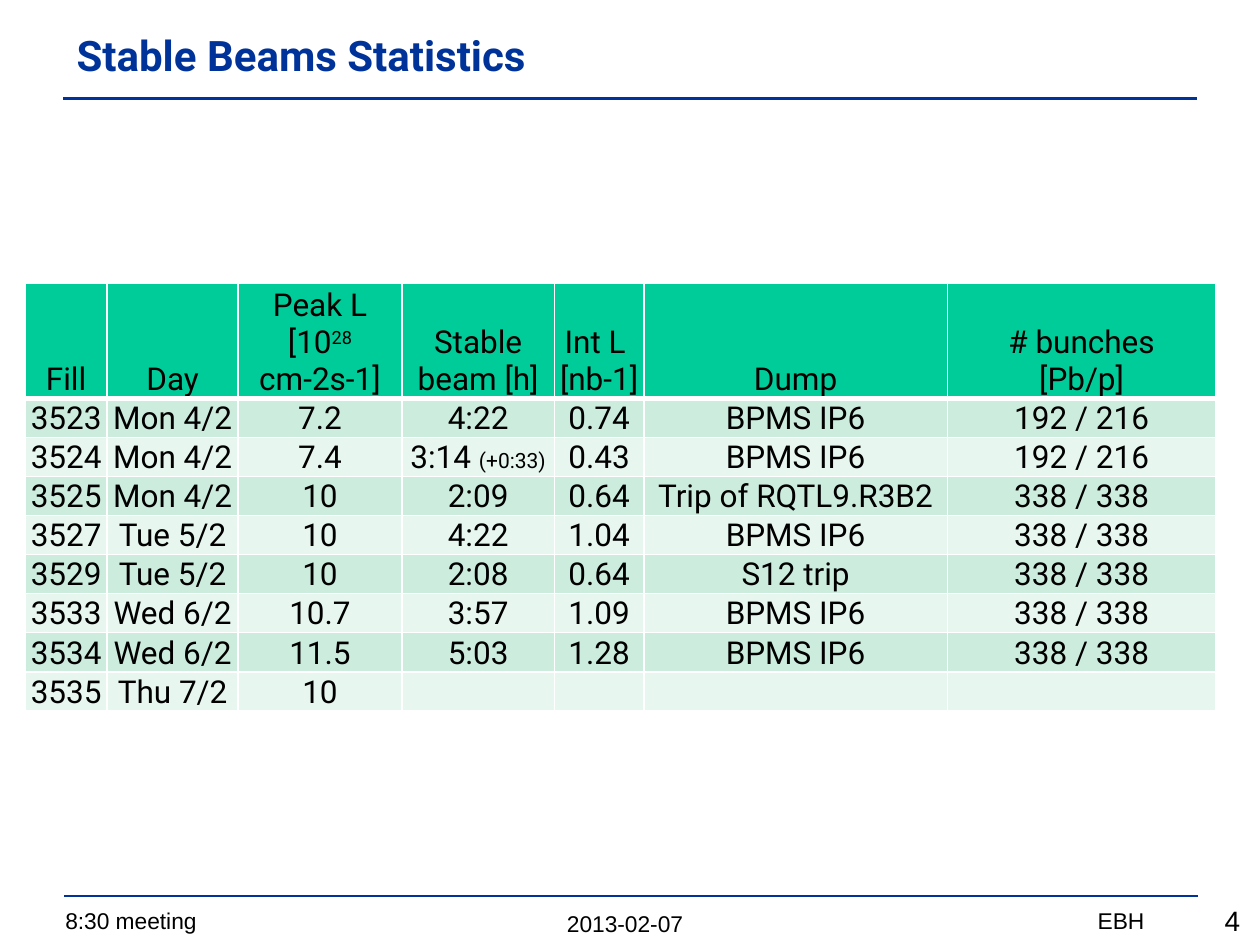
from lxml.etree import SubElement as Sub
from pptx import Presentation
from pptx.dml.color import RGBColor as Rgb
from pptx.enum.shapes import MSO_CONNECTOR as Conn
from pptx.enum.text import MSO_ANCHOR as Anchor, MSO_AUTO_SIZE as Auto, PP_ALIGN as Align
from pptx.oxml.ns import qn
from pptx.util import Inches, Pt

INK = {"text": "000000", "blue": "003399", "head": "00CC99",
       "odd": "CCECDE", "even": "E7F6EF", "rule": "FFFFFF"}
WIDTHS = [0.65, 1.04, 1.3, 1.21, 0.71, 2.41, 2.13]
HEIGHTS = [0.41] + [0.31] * 8
PEAK = [[("Peak L\n[10", {}), ("28 ", {"base": 30}), ("cm-2s-1]", {})]]
SPLIT = [[("3:14 ", {}), ("(+0:33)", {"size": 12})]]
BUNCH = [[("# bunches", {})], [("[Pb/p]", {})]]
ROWS = [
    ["Fill", "Day", PEAK, "Stable beam [h]", "Int L \n[nb-1]", "Dump", BUNCH],
    ["3523", "Mon 4/2", "7.2", "4:22", "0.74", "BPMS IP6", "192 / 216"],
    ["3524", "Mon 4/2", "7.4", SPLIT, "0.43", "BPMS IP6", "192 / 216"],
    ["3525", "Mon 4/2", "10", "2:09", "0.64", "Trip of RQTL9.R3B2", "338 / 338"],
    ["3527", "Tue 5/2", "10", "4:22", "1.04", "BPMS IP6", "338 / 338"],
    ["3529", "Tue 5/2", "10", "2:08", "0.64", "S12 trip", "338 / 338"],
    ["3533", "Wed 6/2", "10.7", "3:57", "1.09", "BPMS IP6", "338 / 338"],
    ["3534", "Wed 6/2", "11.5", "5:03", "1.28", "BPMS IP6", "338 / 338"],
    ["3535", "Thu 7/2", "10", "", "", "", ""],
]


class Deck:
    """Holds the style and the current slide, and draws each kind of element."""

    def __init__(self, ink):
        self.ink = ink
        self.prs = Presentation()
        self.prs.slide_width, self.prs.slide_height = Inches(10), Inches(7.5)
        self.slide = self.prs.slides.add_slide(self.prs.slide_layouts[6])

    def tint(self, name):
        return Rgb.from_string(self.ink[name])

    def run(self, para, text, size, face="Roboto", ink="text", bold=False, base=0):
        for num, part in enumerate(text.split("\n")):
            if num:
                para.add_line_break()
            run = para.add_run()
            run.text = part
            font = run.font
            font.size, font.name, font.bold = Pt(size), face, bold
            font.color.rgb = self.tint(ink)
            if base:
                run._r.get_or_add_rPr().set("baseline", str(base * 1000))

    def label(self, box, text, size, align=Align.LEFT, auto=Auto.SHAPE_TO_FIT_TEXT,
              anchor=Anchor.TOP, **look):
        frame = self.slide.shapes.add_textbox(*map(Inches, box)).text_frame
        frame.word_wrap, frame.auto_size = True, auto
        frame.vertical_anchor = anchor
        para = frame.paragraphs[0]
        para.alignment = align
        self.run(para, text, size, **look)

    def line(self, left, top, right):
        ends = map(Inches, (left, top, right, top))
        line = self.slide.shapes.add_connector(Conn.STRAIGHT, *ends)
        line.line.color.rgb, line.line.width = self.tint("blue"), Pt(1.5)
        Sub(line._element.spPr, qn("a:effectLst"))

    def edge(self, cell, side, width):
        line = Sub(cell._tc.get_or_add_tcPr(), qn("a:ln" + side), w=str(Pt(width)))
        fill = Sub(line, qn("a:solidFill"))
        Sub(fill, qn("a:srgbClr"), val=self.ink["rule"])

    def cell(self, cell, data, row):
        cell.margin_left = cell.margin_top = cell.margin_right = Inches(0.01)
        cell.margin_bottom = 0
        cell.vertical_anchor = Anchor.BOTTOM
        thick = {0: "B", 1: "T"}.get(row)
        for side in "LRTB":
            self.edge(cell, side, 3 if side == thick else 1)
        cell.fill.solid()
        name = "head" if row == 0 else ("even", "odd")[row % 2]
        cell.fill.fore_color.rgb = self.tint(name)
        if not data:
            return
        paras = [[(data, {})]] if isinstance(data, str) else data
        frame = cell.text_frame
        for num, runs in enumerate(paras):
            para = frame.add_paragraph() if num else frame.paragraphs[0]
            para.alignment = Align.CENTER
            for text, look in runs:
                self.run(para, text, **{"size": 18, **look})

    def table(self, box, rows, widths, heights):
        shape = self.slide.shapes.add_table(len(rows), len(widths), *map(Inches, box))
        grid = shape.table
        for col, width in zip(grid.columns, widths):
            col.width = Inches(width)
        for row, height in zip(grid.rows, heights):
            row.height = Inches(height)
        for r, row in enumerate(rows):
            for c, data in enumerate(row):
                self.cell(grid.cell(r, c), data, r)
        shape.height = Inches(box[3])


def main():
    deck = Deck(INK)
    deck.label((2.42, 7.17, 5.08, 0.32), "2013-02-07", 13, Align.CENTER, face="Arial")
    deck.label((0.42, 7.15, 3.7, 0.32), "8:30 meeting", 13, face="Arial")
    deck.label((6.26, 7.15, 2.92, 0.32), "EBH", 13, Align.RIGHT, face="Arial")
    deck.line(0.51, 7.11, 9.51)
    deck.label((8.79, 7.12, 1.15, 0.37), "4", 16, Align.RIGHT, face="Arial")
    deck.line(0.5, 0.78, 9.5)
    deck.label((0.51, 0.09, 8.99, 0.68), "Stable Beams Statistics", 24, auto=Auto.NONE,
               anchor=Anchor.MIDDLE, ink="blue", bold=True)
    deck.table((0.2, 2.25, 9.45, 3.43), ROWS, WIDTHS, HEIGHTS)
    deck.prs.save("out.pptx")


if __name__ == "__main__":
    main()
